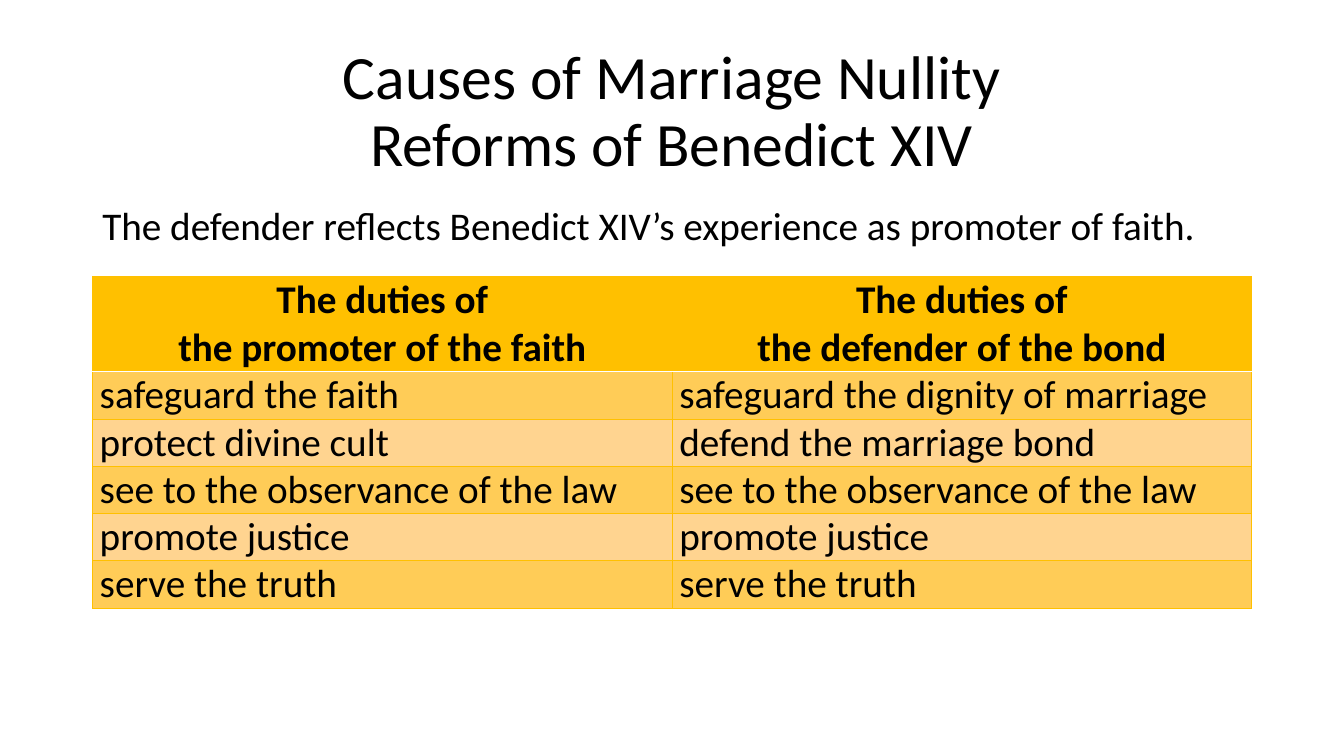
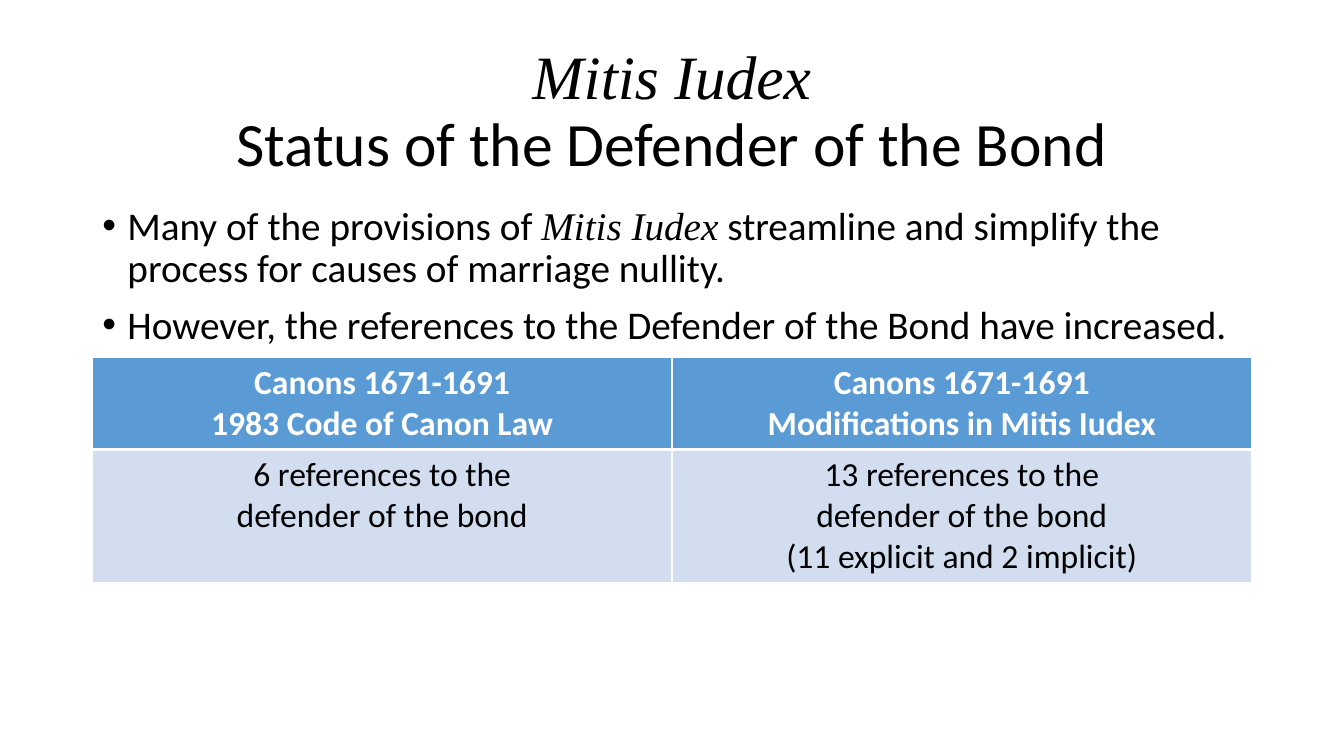
import pptx
import pptx.util
import pptx.dml.color
import pptx.enum.text
import pptx.oxml.ns
import lxml.etree

# Content: *asterisks* set Latin titles in italics
SLIDES = [
    {
        "title": ["Causes of Marriage Nullity", "Reforms of Benedict XIV"],
        "body": ["The defender reflects Benedict XIV’s experience as promoter of faith."],
        "bullet": False,
        "table": {
            "top": 263, "row_heights": [91] + [45] * 5, "theme": "gold",
            "rows": [
                (["The duties of", "the promoter of the faith"],
                 ["The duties of", "the defender of the bond"]),
                (["safeguard the faith"], ["safeguard the dignity of marriage"]),
                (["protect divine cult"], ["defend the marriage bond"]),
                (["see to the observance of the law"], ["see to the observance of the law"]),
                (["promote justice"], ["promote justice"]),
                (["serve the truth"], ["serve the truth"]),
            ],
        },
    },
    {
        "title": ["*Mitis Iudex*", "Status of the Defender of the Bond"],
        "body": [
            "Many of the provisions of *Mitis Iudex* streamline and simplify the "
            "process for causes of marriage nullity.",
            "However, the references to the Defender of the Bond have increased.",
        ],
        "bullet": True,
        "table": {
            "top": 340, "row_heights": [88, 127], "theme": "blue",
            "rows": [
                (["Canons 1671-1691", "1983 Code of Canon Law"],
                 ["Canons 1671-1691", "Modifications in Mitis Iudex"]),
                (["6 references to the", "defender of the bond"],
                 ["13 references to the", "defender of the bond", "(11 explicit and 2 implicit)"]),
            ],
        },
    },
]

# Shared style
COLORS = {
    "black": "000000", "white": "FFFFFF",
    "gold": "FFC000", "gold_dark_band": "FFCC57", "gold_light_band": "FFD490",
    "blue": "5B9BD5", "blue_band": "D2DEEF",
}
THEMES = {
    "gold": {"header": "gold", "header_text": "black", "bands": ["gold_dark_band", "gold_light_band"],
             "border": ("gold", 0.5), "header_rule": ("white", 1),
             "size": 28, "align": "LEFT", "margins": (7, 0)},
    "blue": {"header": "blue", "header_text": "white", "bands": ["blue_band"],
             "border": ("white", 1), "header_rule": ("white", 3),
             "size": 24, "align": "CENTER", "margins": (10, 5)},
}
FONT, LATIN_FONT = "Calibri", "Times New Roman"
SLIDE_WIDTH, SLIDE_HEIGHT = 1280, 720
LEFT, WIDTH = 88, 1104
TITLE_TOP, TITLE_HEIGHT = 38, 139
BODY_TOP = 192
BULLET_INDENT = 24


def px(length):
    return pptx.util.Emu(length * 9525)


def color(name):
    return pptx.dml.color.RGBColor.from_string(COLORS[name])


def write_text(frame, lines, size, color_name="black", bold=False, align="LEFT",
               line_spacing=1.0, space_before=0, bullet=False):
    for index, line in enumerate(lines):
        paragraph = frame.paragraphs[0] if index == 0 else frame.add_paragraph()
        paragraph.alignment = getattr(pptx.enum.text.PP_ALIGN, align)
        paragraph.line_spacing = line_spacing
        paragraph.space_before = pptx.util.Pt(space_before)
        if bullet:
            properties = paragraph._p.get_or_add_pPr()
            properties.set("marL", str(px(BULLET_INDENT)))
            properties.set("indent", str(-px(BULLET_INDENT)))
            for tag, name, value in (("a:buFont", "typeface", "Arial"), ("a:buChar", "char", "•")):
                lxml.etree.SubElement(properties, pptx.oxml.ns.qn(tag)).set(name, value)
        for part, text in enumerate(line.split("*")):
            if not text:
                continue
            latin = part % 2 == 1
            run = paragraph.add_run()
            run.text = text
            run.font.name = LATIN_FONT if latin else FONT
            run.font.italic = latin
            run.font.bold = bold
            run.font.size = pptx.util.Pt(size)
            run.font.color.rgb = color(color_name)


def add_text_box(slide, top, height, lines, anchor="TOP", **text_format):
    frame = slide.shapes.add_textbox(px(LEFT), px(top), px(WIDTH), px(height)).text_frame
    frame.word_wrap = True
    frame.vertical_anchor = getattr(pptx.enum.text.MSO_ANCHOR, anchor)
    write_text(frame, lines, line_spacing=0.9, **text_format)


def set_borders(cell, borders):
    """Borders come in the order left, right, top, bottom, ahead of the fill."""
    properties = cell._tc.get_or_add_tcPr()
    for index, (side, (color_name, width)) in enumerate(zip("LRTB", borders)):
        line = lxml.etree.Element(pptx.oxml.ns.qn("a:ln" + side), w=str(pptx.util.Pt(width)))
        fill = lxml.etree.SubElement(line, pptx.oxml.ns.qn("a:solidFill"))
        lxml.etree.SubElement(fill, pptx.oxml.ns.qn("a:srgbClr")).set("val", COLORS[color_name])
        properties.insert(index, line)


def add_table(slide, top, row_heights, theme, rows):
    style = THEMES[theme]
    columns = len(rows[0])
    table = slide.shapes.add_table(len(rows), columns, px(LEFT), px(top),
                                   px(WIDTH), px(sum(row_heights))).table
    table.horz_banding = False
    for column in table.columns:
        column.width = px(WIDTH // columns)
    side_margin, end_margin = style["margins"]
    border, rule = style["border"], style["header_rule"]
    for row_index, row in enumerate(rows):
        table.rows[row_index].height = px(row_heights[row_index])
        header = row_index == 0
        bands = style["bands"]
        fill_name = style["header"] if header else bands[(row_index - 1) % len(bands)]
        for column_index, lines in enumerate(row):
            cell = table.cell(row_index, column_index)
            cell.margin_left = cell.margin_right = px(side_margin)
            cell.margin_top = cell.margin_bottom = px(end_margin)
            cell.fill.solid()
            cell.fill.fore_color.rgb = color(fill_name)
            set_borders(cell, [border, border, rule if row_index == 1 else border,
                               rule if header else border])
            write_text(cell.text_frame, lines, style["size"], bold=header,
                       color_name=style["header_text"] if header else "black",
                       align="CENTER" if header else style["align"])


def main():
    presentation = pptx.Presentation()
    presentation.slide_width, presentation.slide_height = px(SLIDE_WIDTH), px(SLIDE_HEIGHT)
    for content in SLIDES:
        slide = presentation.slides.add_slide(presentation.slide_layouts[6])
        # Title, body text, table
        add_text_box(slide, TITLE_TOP, TITLE_HEIGHT, content["title"],
                     anchor="MIDDLE", size=44, align="CENTER")
        add_text_box(slide, BODY_TOP, content["table"]["top"] - BODY_TOP, content["body"],
                     size=28, space_before=10, bullet=content["bullet"])
        add_table(slide, **content["table"])
    presentation.save("out.pptx")


if __name__ == "__main__":
    main()
